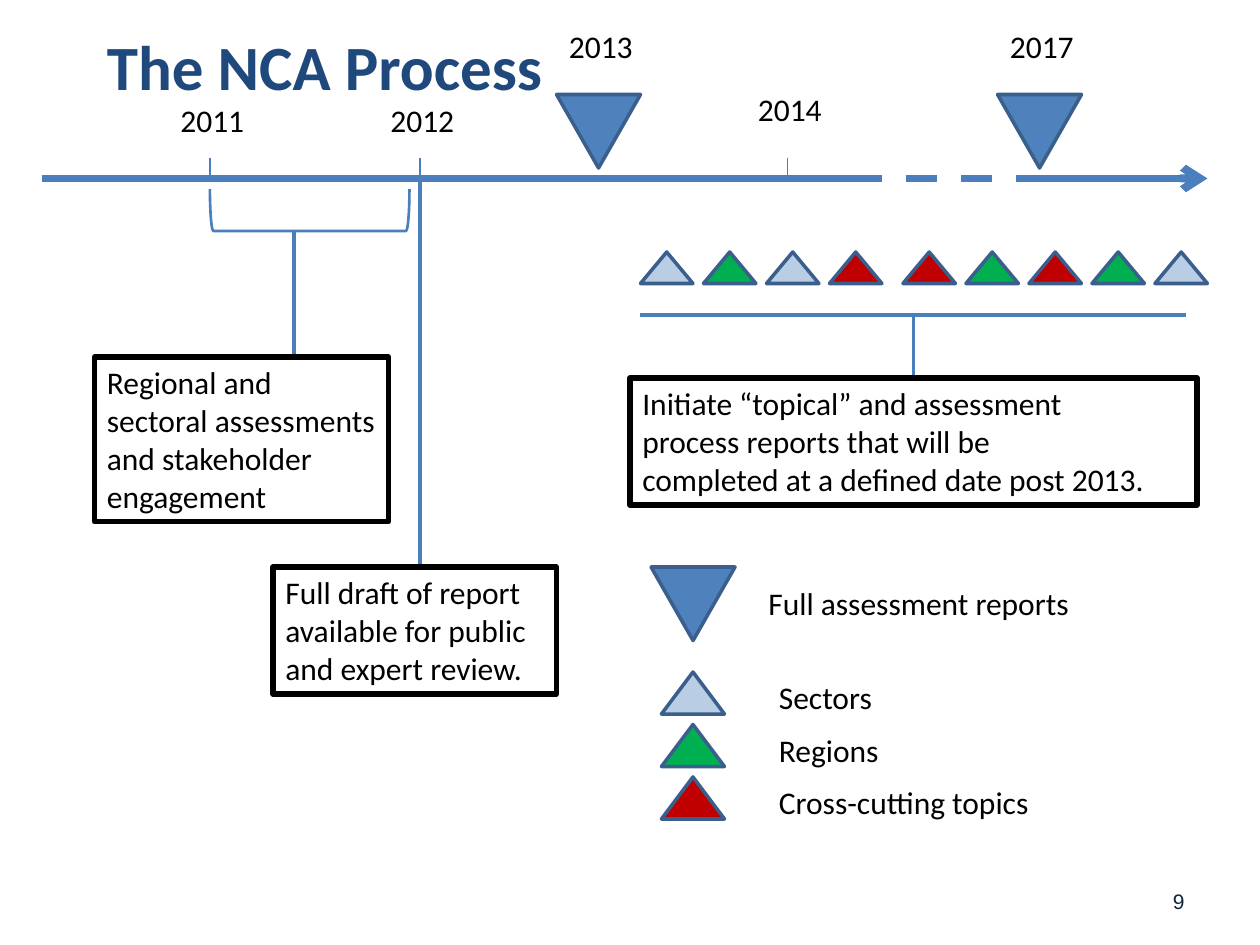
from pptx import Presentation
from pptx.dml.color import RGBColor
from pptx.enum.dml import MSO_LINE as Dash
from pptx.enum.shapes import MSO_CONNECTOR as Link, MSO_SHAPE as Form
from pptx.enum.text import MSO_ANCHOR as Anchor, MSO_AUTO_SIZE as Fit, PP_ALIGN as Align
from pptx.oxml.ns import qn
from pptx.util import Inches, Pt
from lxml.etree import SubElement

CELL = Inches(10) / 120
BLUE, EDGE, FLAG = "4B7EBC", "3A5F8C", "4F81BD"
SECTOR, REGION, TOPIC = "B9CDE5", "00B050", "C00000"
BODY = {"size": Pt(18), "name": "Calibri"}
HEAD = {"size": Pt(36), "name": "Calibri", "bold": True}
NUMBER = {"size": Pt(12), "name": "Arial"}


def cells(*vals):
    return [round(val * CELL) for val in vals]


def rgb(code):
    return RGBColor.from_string(code)


def apply(item, form):
    for key, val in form.items():
        setattr(item, key, val)


def write(shape, lines, font, color="000000", align=Align.LEFT, **form):
    frame = shape.text_frame
    apply(frame, {"word_wrap": True, "vertical_anchor": Anchor.TOP, **form})
    for i, line in enumerate(lines):
        para = frame.add_paragraph() if i else frame.paragraphs[0]
        para.text, para.alignment = line, align
        apply(para.font, font)
        para.font.color.rgb = rgb(color)


def label(slide, x, y, w, text, h=4.8, font=BODY, color="000000"):
    box = slide.shapes.add_textbox(*cells(x, y, w, h))
    write(box, [text], font, color, word_wrap=False, auto_size=Fit.SHAPE_TO_FIT_TEXT)


def line(slide, x1, y1, x2, y2, width=2.25, dash=None, head=False):
    link = slide.shapes.add_connector(Link.STRAIGHT, *cells(x1, y1, x2, y2))
    link.line.color.rgb = rgb(BLUE)
    apply(link.line, {"width": Pt(width), "dash_style": dash})
    if head:
        SubElement(link.line._ln, qn("a:tailEnd"), type="arrow")
    SubElement(link._element.spPr, qn("a:effectLst"))


def shape(slide, form, x, y, w, h, fill=None, edge=EDGE, width=2, turn=0):
    item = slide.shapes.add_shape(form, *cells(x, y, w, h))
    item.shadow.inherit = False
    item.rotation = turn
    if fill:
        item.fill.solid()
        item.fill.fore_color.rgb = rgb(fill)
    else:
        item.fill.background()
    item.line.color.rgb = rgb(edge)
    item.line.width = Pt(width)
    return item


def flag(slide, x, y):
    shape(slide, Form.ISOSCELES_TRIANGLE, x, y, 8, 7, FLAG, turn=180)


def note(slide, box, lines):
    item = shape(slide, Form.RECTANGLE, *box, edge="000000", width=3)
    write(item, lines, BODY)


def timeline(slide, box):
    x, y, w, h = box
    base = y + h
    line(slide, x, base, x + 77, base, 4.5)
    line(slide, x + 77, base, x + 94, base, 4.5, Dash.DASH)
    line(slide, x + 94, base, x + w, base, 4.5, head=True)
    for col in (16, 36, 71):
        line(slide, x + col, base - 2, x + col, base, 0.75)
    for col, row, year in ((12, 7, "2011"), (32, 7, "2012"), (49, 0, "2013"),
                           (67, 6, "2014"), (91, 0, "2017")):
        label(slide, x + col, y + row, 8.5, year)
    for col in (49, 91):
        flag(slide, x + col, y + 7)


def early(slide, box):
    x, y, w, h = box
    span, deep = 19, 4
    shape(slide, Form.LEFT_BRACKET, x + 11 + (span - deep) / 2,
          y + 1 - (span - deep) / 2, deep, span, edge=BLUE, width=1.5, turn=270)
    line(slide, x + 19, y + 17, x + 19, y + 5)
    note(slide, (x, y + 17, w, h - 17),
         ["Regional and sectoral assessments and stakeholder engagement"])


def draft(slide, box):
    x, y, w, h = box
    line(slide, x + 14, y + 37, x + 14, y)
    note(slide, (x, y + 37, w, h - 37),
         ["Full draft of report available for public and expert review."])


def topics(slide, box):
    x, y, w, h = box
    groups = ((1, (SECTOR, REGION, SECTOR, TOPIC)),
              (26, (TOPIC, REGION, TOPIC, REGION, SECTOR)))
    for start, fills in groups:
        for i, fill in enumerate(fills):
            shape(slide, Form.ISOSCELES_TRIANGLE, x + start + 6 * i, y, 5, 3, fill)
    line(slide, x + 1, y + 6, x + 53, y + 6)
    line(slide, x + w / 2, y + 12, x + w / 2, y + 6)
    note(slide, (x, y + 12, w, h - 12),
         ["Initiate “topical” and assessment", "process reports that will be",
          "completed at a defined date post 2013."])


def legend(slide, box):
    x, y, w, h = box
    flag(slide, x, y)
    label(slide, x + 10, y + 1, w - 10, "Full assessment reports")
    rows = ((SECTOR, "Sectors", 13), (REGION, "Regions", 15),
            (TOPIC, "Cross-cutting topics", 29))
    for i, (fill, text, wide) in enumerate(rows):
        top = y + 10 + 5 * i
        shape(slide, Form.ISOSCELES_TRIANGLE, x + 1, top, 6, 4, fill)
        item = slide.shapes.add_textbox(*cells(x + 11, top, wide, 4.8))
        write(item, [text], BODY)


def footer(slide, box):
    item = slide.shapes.add_textbox(*cells(*box))
    write(item, ["9"], NUMBER, "0F243E", Align.RIGHT, vertical_anchor=Anchor.MIDDLE)


def main():
    deck = Presentation()
    deck.slide_width, deck.slide_height = Inches(10), Inches(7.5)
    slide = deck.slides.add_slide(deck.slide_layouts[6])
    draft(slide, (26, 17, 27, 49.1))
    topics(slide, (60, 24, 54, 24.1))
    timeline(slide, (4, 2, 111, 15))
    early(slide, (9, 17, 28, 32.7))
    legend(slide, (62, 54, 41.2, 24))
    label(slide, 9, 2, 44.3, "The NCA Process", 8.5, HEAD, "1F497D")
    footer(slide, (86, 83.4, 28, 4.8))
    deck.save("out.pptx")


if __name__ == "__main__":
    main()
